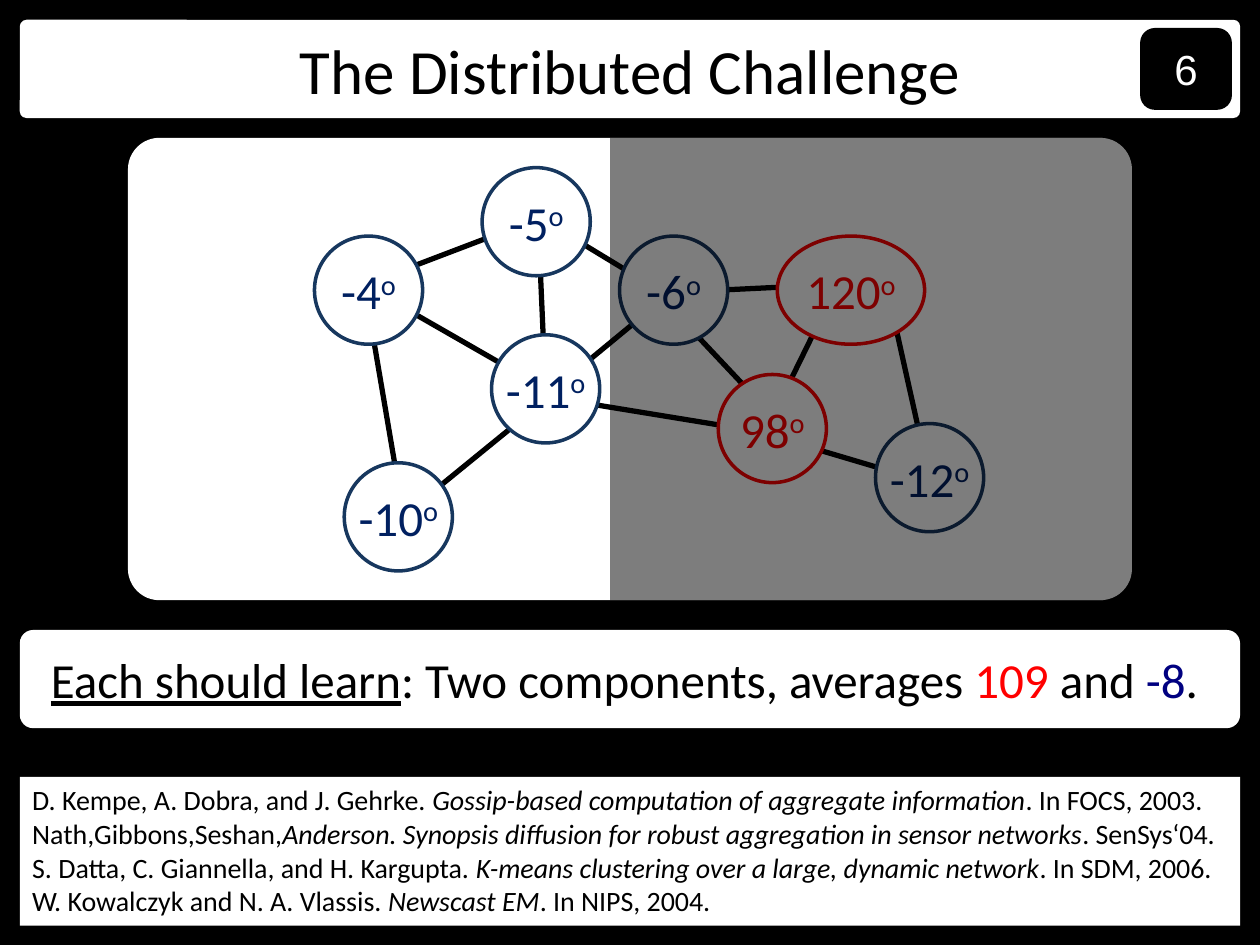
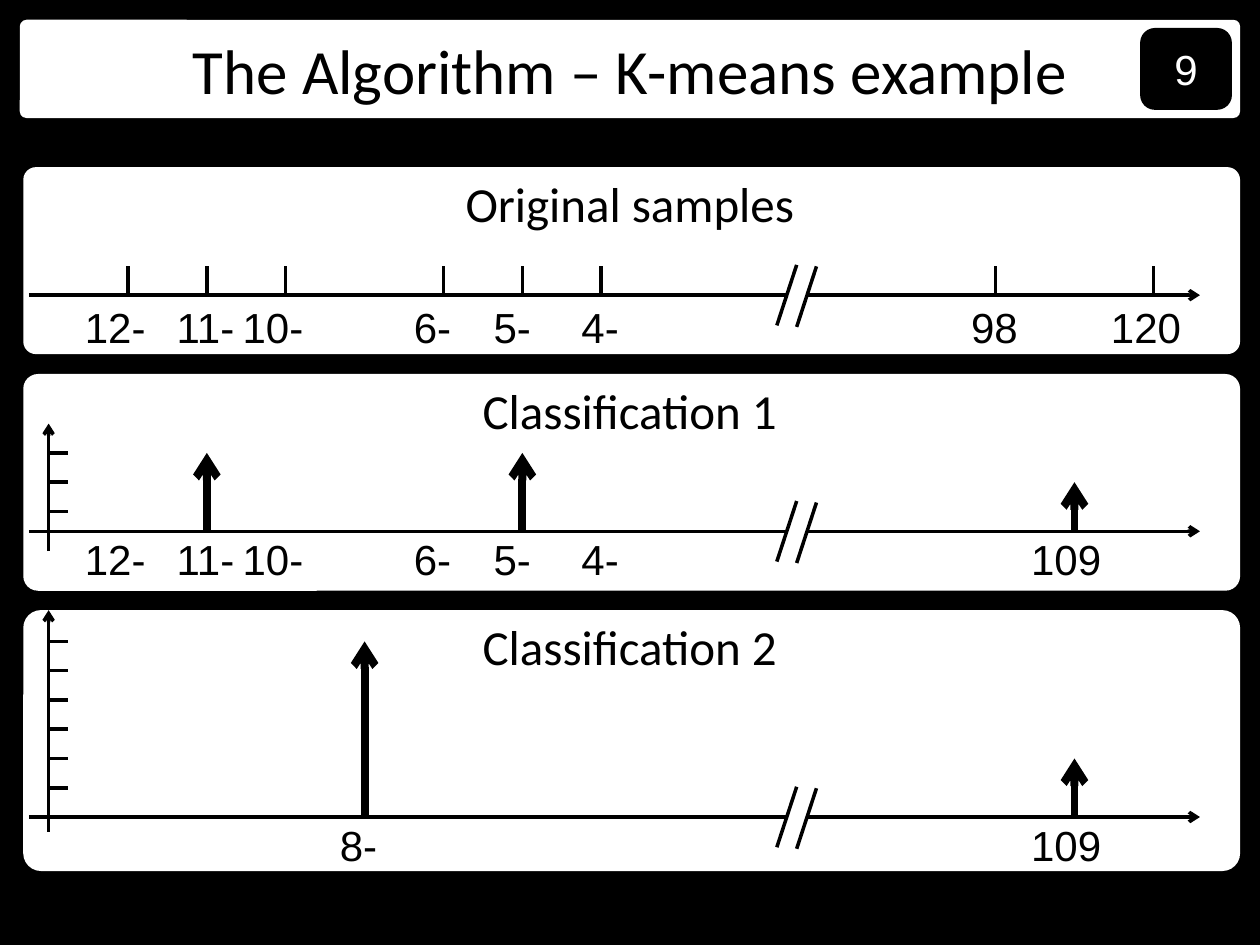
from lxml import etree
from pptx import Presentation
from pptx.dml.color import RGBColor
from pptx.enum.shapes import MSO_CONNECTOR, MSO_SHAPE
from pptx.enum.text import MSO_ANCHOR, MSO_AUTO_SIZE, PP_ALIGN
from pptx.oxml.ns import qn
from pptx.util import Cm, Pt

ROUNDED = MSO_SHAPE.ROUNDED_RECTANGLE
RECTANGLE = MSO_SHAPE.RECTANGLE
OVAL = MSO_SHAPE.OVAL
STRAIGHT = MSO_CONNECTOR.STRAIGHT
LEFT, CENTER, RIGHT = PP_ALIGN.LEFT, PP_ALIGN.CENTER, PP_ALIGN.RIGHT
TOP, MIDDLE = MSO_ANCHOR.TOP, MSO_ANCHOR.MIDDLE
GROW = MSO_AUTO_SIZE.SHAPE_TO_FIT_TEXT

BLACK, WHITE, RED = "000000", "FFFFFF", "FF0000"
NAVY, NODE_BLUE, NODE_LINE = "000080", "002060", "17375E"
FONT, DIGIT_FONT = "Calibri", "Arial"
CORNER = 0.068

# Sensor network, in cm from the corner of its panel
NODES = [  # text, left, top, width, is hot
    ("-4", 3.76, 1.98, 2.18, False),
    ("-10", 4.36, 6.55, 2.18, False),
    ("-5", 7.14, 0.6, 2.18, False),
    ("-6", 9.91, 1.98, 2.18, False),
    ("120", 13.09, 1.98, 2.97, True),
    ("-12", 15.07, 5.76, 2.18, False),
    ("-11", 7.33, 3.97, 2.18, False),
    ("98", 11.9, 4.77, 2.18, True),
]
EDGES = [  # start x, start y, end x, end y
    (4.93, 3.94, 5.41, 6.76), (7.82, 5.77, 6.2, 7.09),
    (11.38, 3.89, 12.5, 5.08), (10.29, 3.66, 9.09, 4.65),
    (13.36, 3, 11.89, 3.07), (8.31, 2.62, 8.38, 4.22),
    (8.99, 2.03, 10.08, 2.69), (7.34, 1.98, 5.74, 2.59),
    (15.47, 3.78, 15.98, 6.07), (13.87, 3.84, 13.31, 4.98),
    (5.66, 3.48, 7.7, 4.65), (13.79, 6.25, 15.34, 6.71),
    (9.3, 5.36, 12.12, 5.82),
]
REFERENCES = [  # authors, title, venue
    ("D. Kempe, A. Dobra, and J. Gehrke. ",
     "Gossip-based computation of aggregate information", ". In FOCS, 2003."),
    ("Nath,Gibbons,Seshan,",
     "Anderson. Synopsis diffusion for robust aggregation in sensor networks",
     ". SenSys‘04."),
    ("S. Datta, C. Giannella, and H. Kargupta. ",
     "K-means clustering over a large, dynamic network", ". In SDM, 2006."),
    ("W. Kowalczyk and N. A. Vlassis. ", "Newscast EM", ". In NIPS, 2004."),
]

# Number lines: value -> (slot on the axis, shift of its label in cm)
SLOTS = {
    "-12": (0, -0.29), "-11": (1, -0.09), "-10": (2, -0.29), "-8": (3, -0.15),
    "-6": (4, -0.25), "-5": (5, -0.23), "-4": (6, -0.05),
    "98": (11, -0.05), "109": (12, -0.2), "120": (13, -0.18),
}
COLD = ["-12", "-11", "-10", "-6", "-5", "-4"]
LEVEL = 0.59


def color(value):
    return RGBColor.from_string(value)


def add_box(slide, kind, left, top, width, height, fill=WHITE, line=None,
            corner=None):
    shape = slide.shapes.add_shape(kind, Cm(left), Cm(top), Cm(width), Cm(height))
    shape.shadow.inherit = False
    shape.fill.solid()
    shape.fill.fore_color.rgb = color(fill)
    if line:
        shape.line.color.rgb = color(line)
        shape.line.width = Pt(2)
    else:
        shape.line.fill.background()
    if corner is not None:
        shape.adjustments[0] = corner
    return shape


def add_line(slide, start_x, start_y, end_x, end_y, width=2, arrow=False):
    line = slide.shapes.add_connector(
        STRAIGHT, Cm(start_x), Cm(start_y), Cm(end_x), Cm(end_y))
    line.line.color.rgb = color(BLACK)
    line.line.width = Pt(width)
    if arrow:
        outline = line._element.spPr.find(qn("a:ln"))
        etree.SubElement(outline, qn("a:tailEnd"), type="arrow")
    etree.SubElement(line._element.spPr, qn("a:effectLst"))


def add_run(paragraph, text, size, fill=BLACK, italic=None, underline=None,
            raised=False):
    run = paragraph.add_run()
    run.text = text
    font = run.font
    font.name, font.size = FONT, Pt(size)
    font.color.rgb = color(fill)
    font.italic, font.underline = italic, underline
    properties = run._r.get_or_add_rPr()
    etree.SubElement(properties, qn("a:cs"), typeface=DIGIT_FONT)
    if raised:
        properties.set("baseline", "30000")


def first_paragraph(shape, align=CENTER, anchor=MIDDLE, wrap=True,
                    right_to_left=False):
    frame = shape.text_frame
    frame.word_wrap = wrap
    frame.vertical_anchor = anchor
    paragraph = frame.paragraphs[0]
    paragraph.alignment = align
    if right_to_left:
        paragraph._p.get_or_add_pPr().set("rtl", "1")
    return paragraph


def add_text(slide, text, size, left, top, width, height, align=CENTER,
             wrap=True, right_to_left=False):
    shape = slide.shapes.add_textbox(Cm(left), Cm(top), Cm(width), Cm(height))
    paragraph = first_paragraph(shape, align, TOP, wrap, right_to_left)
    shape.text_frame.auto_size = GROW
    add_run(paragraph, text, size)


def add_titled_slide(presentation, title, number):
    slide = presentation.slides.add_slide(presentation.slide_layouts[6])
    slide.background.fill.solid()
    slide.background.fill.fore_color.rgb = color(BLACK)
    band = add_box(slide, ROUNDED, 0.4, 0.4, 24.6, 1.98, corner=CORNER)
    add_run(first_paragraph(band), title, 36)
    badge = add_box(slide, ROUNDED, 23.02, 0.6, 1.78, 1.58, BLACK, BLACK)
    add_run(first_paragraph(badge, right_to_left=True), number, 24, WHITE)
    return slide


def add_network(slide, left, top, width, height):
    add_box(slide, ROUNDED, left, top, width, height, corner=CORNER)
    for start_x, start_y, end_x, end_y in EDGES:
        add_line(slide, left + start_x, top + start_y, left + end_x, top + end_y, 3)
    for text, x, y, node_width, hot in NODES:
        node = add_box(slide, OVAL, left + x, top + y, node_width, 2.18,
                       line=RED if hot else NODE_LINE)
        paragraph = first_paragraph(node, wrap=False)
        frame = node.text_frame
        frame.margin_left = frame.margin_right = 0
        frame.margin_top = frame.margin_bottom = 0
        fill = RED if hot else NODE_BLUE
        add_run(paragraph, text, 28, fill)
        add_run(paragraph, "o", 28, fill, raised=True)


def add_veil(slide, left, top, width, height):
    veil = add_box(slide, ROUNDED, left, top, width, height, BLACK, corner=0)
    solid = veil._element.spPr.find(qn("a:solidFill"))
    etree.SubElement(solid[0], qn("a:alpha"), val="51000")


def add_lesson(slide, left, top, width, height):
    box = add_box(slide, ROUNDED, left, top, width, height, corner=0.135)
    paragraph = first_paragraph(box)
    add_run(paragraph, "Each should learn", 28, underline=True)
    for text, fill in [(": Two components, averages ", BLACK), ("109", RED),
                       (" and ", BLACK), ("-8", NAVY), (". ", BLACK)]:
        add_run(paragraph, text, 28, fill)


def add_references(slide, left, top, width, height):
    box = add_box(slide, RECTANGLE, left, top, width, height)
    paragraph = first_paragraph(box, LEFT, TOP)
    for index, (authors, title, venue) in enumerate(REFERENCES):
        if index:
            paragraph = box.text_frame.add_paragraph()
            paragraph.alignment = LEFT
        properties = paragraph._p.get_or_add_pPr()
        properties.set("marL", str(Cm(0.97)))
        properties.set("indent", str(-Cm(0.97)))
        add_run(paragraph, authors, 16)
        add_run(paragraph, title, 16, italic=True)
        add_run(paragraph, venue, 16)


def slot_x(left, value):
    return left + 2.11 + 1.59 * SLOTS[value][0]


def add_value_label(slide, left, top, value):
    # Room for the side margins, the digits and the minus sign
    digits = len(value.lstrip("-"))
    width = 0.54 + 0.48 * digits + 0.29 * (len(value) - digits)
    middle = slot_x(left, value) + SLOTS[value][1]
    add_text(slide, value, 24, middle - width / 2, top, width, 1.27, RIGHT,
             wrap=False, right_to_left=True)


def add_number_line(slide, left, top, height, axis, title, values, label_rise=0.0):
    """Panel with a title, a broken horizontal axis and its labels."""
    add_box(slide, ROUNDED, left, top, 24.53, height, corner=CORNER)
    add_text(slide, title, 28, left - 0.08, top, 24.61, 1.45)
    axis_y = top + axis
    for value in values:
        add_value_label(slide, left, axis_y - label_rise, value)
    add_line(slide, left + 0.11, axis_y, left + 23.72, axis_y, arrow=True)
    # Axis break
    add_box(slide, RECTANGLE, left + 15.39, axis_y - 0.38, 0.4, 0.58)
    for x, drop in [(15.19, 0), (15.59, 0.03)]:
        add_line(slide, left + x, axis_y + 0.61 + drop,
                 left + x + 0.4, axis_y - 0.61 + drop)
    return axis_y


def add_samples(slide, left, top, height, axis):
    values = COLD + ["98", "120"]
    axis_y = add_number_line(slide, left, top, height, axis,
                             "Original samples", values)
    for value in values:
        x = slot_x(left, value)
        add_line(slide, x, axis_y, x, axis_y - 0.59)


def add_classification(slide, left, top, height, axis, title, values, weights,
                       axis_top, axis_drop, first_level):
    axis_y = add_number_line(slide, left, top, height, axis, title, values, 0.08)
    # Weight axis
    axis_x = left + 0.51
    add_line(slide, axis_x, axis_y + axis_drop, axis_x, top + axis_top, arrow=True)
    for level in range(max(weights.values())):
        y = axis_y - first_level - LEVEL * level
        add_line(slide, axis_x, y, axis_x + 0.4, y)
    # Cluster arrows
    for value, weight in weights.items():
        x = slot_x(left, value)
        tip = axis_y - first_level - LEVEL * (weight - 1)
        add_line(slide, x, axis_y, x, tip, 4.5, arrow=True)


def build_challenge(presentation):
    slide = add_titled_slide(presentation, "The Distributed Challenge", "6")
    add_network(slide, 2.58, 2.78, 20.24, 9.32)
    add_lesson(slide, 0.4, 12.7, 24.6, 1.98)
    add_references(slide, 0.4, 15.66, 24.6, 3)
    add_veil(slide, 12.3, 2.78, 13.1, 9.32)


def build_example(presentation):
    slide = add_titled_slide(presentation, "The Algorithm – K-means example", "9")
    add_samples(slide, 0.47, 3.37, 3.77, 2.58)
    add_classification(slide, 0.47, 7.54, 4.37, 3.17, "Classification 1",
                       COLD + ["109"], {"-11": 3, "-5": 3, "109": 2},
                       axis_top=1, axis_drop=0.4, first_level=0.4)
    add_classification(slide, 0.47, 12.3, 5.26, 4.17, "Classification 2",
                       ["-8", "109"], {"-8": 6, "109": 2},
                       axis_top=0, axis_drop=0.3, first_level=LEVEL)


def main():
    presentation = Presentation()
    presentation.slide_width, presentation.slide_height = Cm(25.4), Cm(19.05)
    build_challenge(presentation)
    build_example(presentation)
    presentation.save("out.pptx")


if __name__ == "__main__":
    main()
